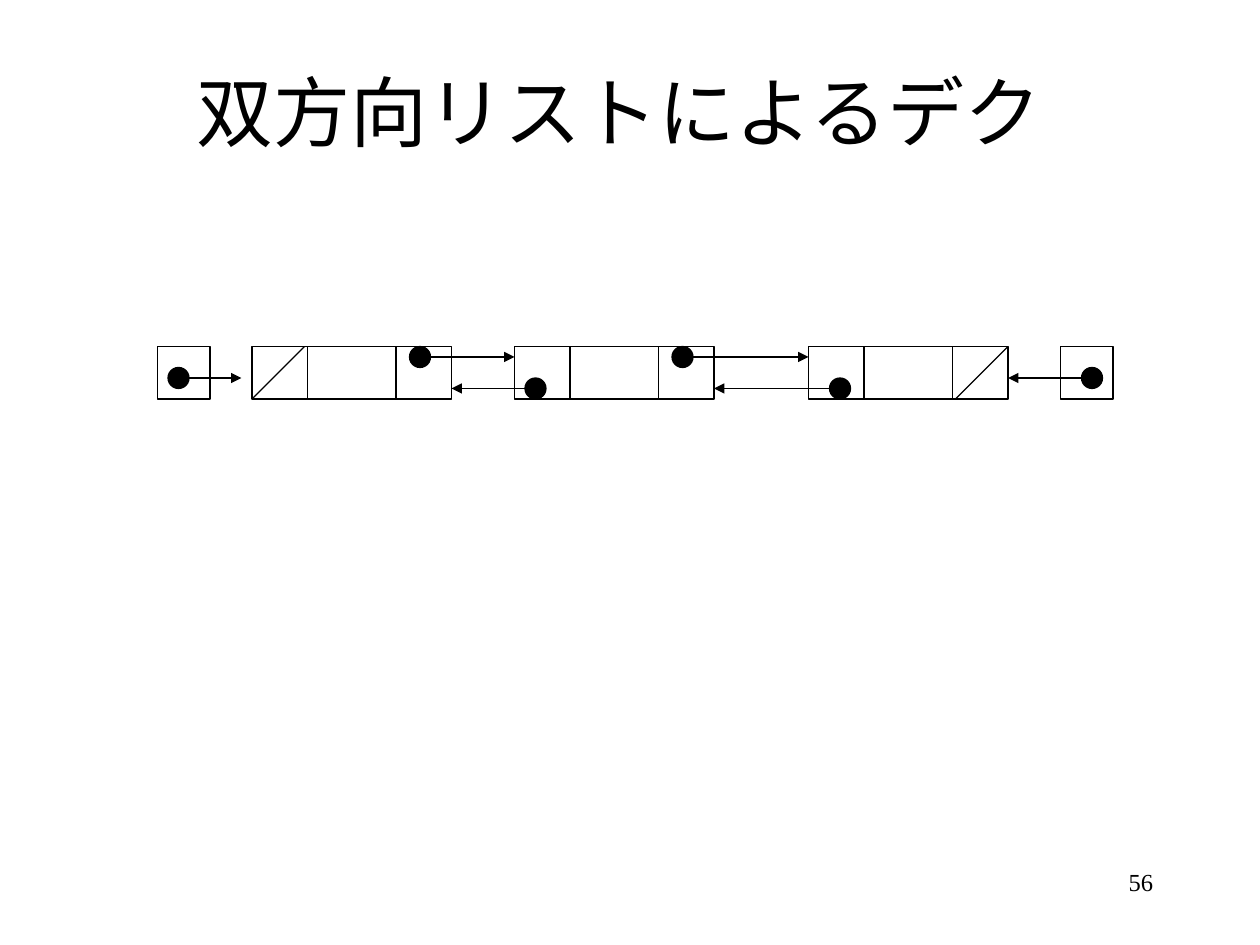
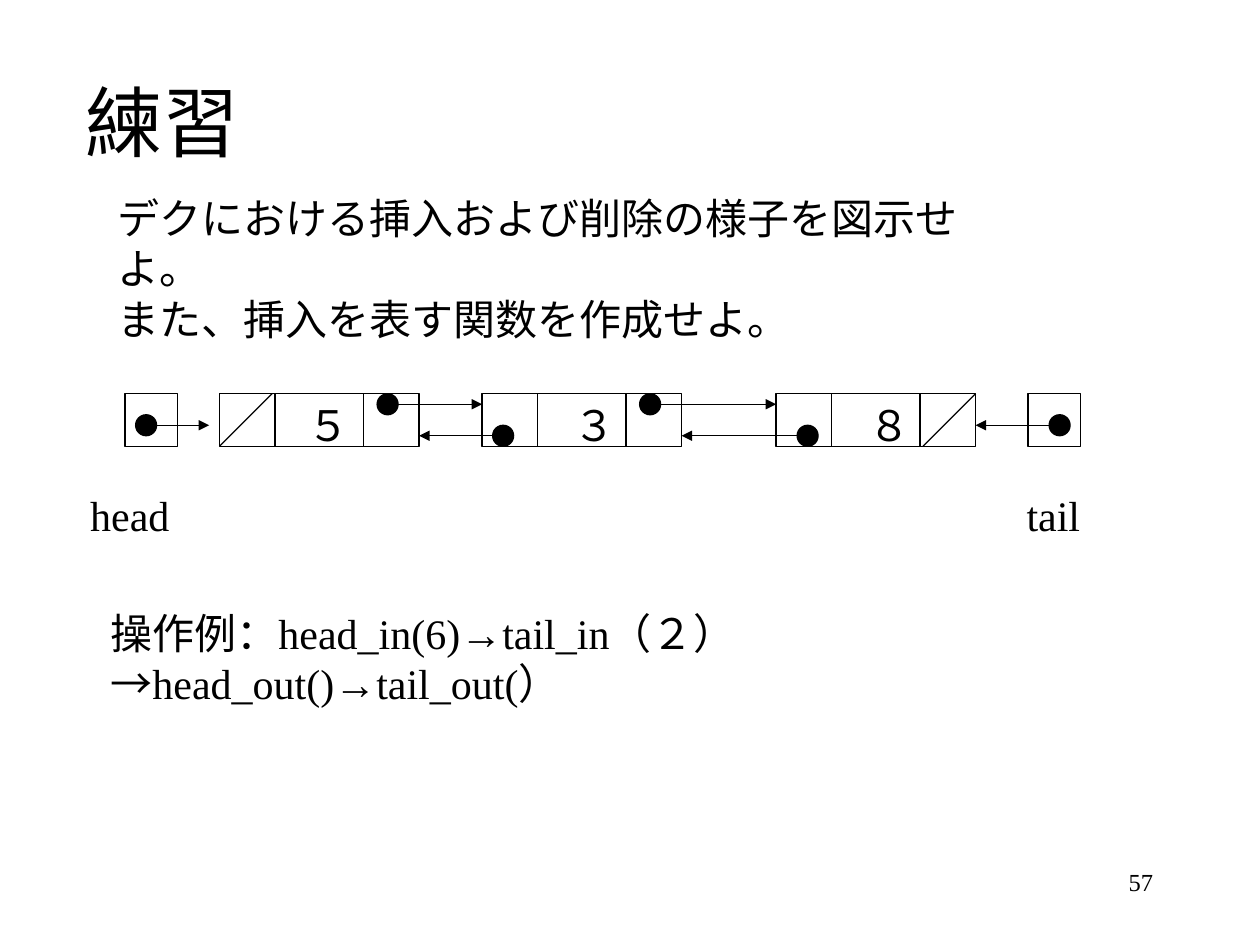
from pptx import Presentation
from pptx.dml.color import RGBColor
from pptx.enum.shapes import MSO_CONNECTOR as CONN, MSO_SHAPE as SHAPE
from pptx.enum.text import MSO_ANCHOR as ANCHOR, PP_ALIGN as ALIGN
from pptx.oxml.ns import qn
from pptx.util import Pt
from lxml.etree import SubElement

FONT = "Times New Roman"
BLACK = "000000"
TITLE_SIZE, BODY_SIZE, PAGE_SIZE = 44, 24, 14

# Boxes are (left, top, width, height) in points
PAGE_BOX = (516, 492, 150, 36)
SLIDES = [
    {
        "page": "56",
        "title": ("双方向リストによるデク", (48, 18, 612, 90), ALIGN.CENTER),
        "list_at": (90, 198),
        "values": [],
        "texts": [],
    },
    {
        "page": "57",
        "title": ("練習", (42, 24, 612, 90), ALIGN.LEFT),
        "list_at": (71.5, 225),
        "values": ["５", "３", "８"],
        "texts": [
            (["デクにおける挿入および削除の様子を図示せよ。",
              "また、挿入を表す関数を作成せよ。"], (60, 106.5, 510, 65), True),
            (["head"], (44.5, 276, 60.5, 36.5), False),
            (["tail"], (579.5, 276, 45.5, 36.5), False),
            (["操作例：head_in(6)→tail_in（２）→head_out()→tail_out(）"],
             (56, 343.5, 578, 36.5), True),
        ],
    },
]

# Linked list, measured from the top left of its head box
BOX = 30
DOT = 12
LINK_W, DATA_W = 31.75, 50.5
NODE_W = 2 * LINK_W + DATA_W
NODES = [54, 204, 372]
TAIL = 516
NEXT_DOT = 90            # from the node's left side
PREV_DOTS = [6, 12]      # the same, for the second and third node
VALUE_LEFTS = [43, 45, 46]
NEXT_Y, MID_Y, PREV_Y = 6, 18, 24


def rgb(color):
    return RGBColor.from_string(color)


def add_text(s, lines, box, size=BODY_SIZE, align=ALIGN.LEFT, anchor=ANCHOR.TOP, wrap=True):
    tf = s.shapes.add_textbox(*map(Pt, box)).text_frame
    tf.word_wrap = wrap
    tf.vertical_anchor = anchor
    for i, line in enumerate(lines):
        p = tf.add_paragraph() if i else tf.paragraphs[0]
        p.alignment = align
        r = p.add_run()
        r.text = line
        for key, value in {"name": FONT, "size": Pt(size)}.items():
            setattr(r.font, key, value)
        r.font.color.rgb = rgb(BLACK)


def add_outlined(s, kind, left, top, width, height, fill=None):
    sp = s.shapes.add_shape(kind, Pt(left), Pt(top), Pt(width), Pt(height))
    sp.shadow.inherit = False
    if fill:
        sp.fill.solid()
        sp.fill.fore_color.rgb = rgb(fill)
    else:
        sp.fill.background()
    sp.line.color.rgb = rgb(BLACK)
    sp.line.width = Pt(0.75)


def add_line(s, x1, y1, x2, y2, arrow=True):
    c = s.shapes.add_connector(CONN.STRAIGHT, Pt(x1), Pt(y1), Pt(x2), Pt(y2))
    c.line.color.rgb = rgb(BLACK)
    c.line.width = Pt(0.75)
    if arrow:
        SubElement(c.line._get_or_add_ln(), qn("a:tailEnd"), type="triangle")
    SubElement(c._element.spPr, qn("a:effectLst"))


def add_linked_list(s, x0, y0, values):
    cells = [(0, BOX), (TAIL, BOX)]
    for node in NODES:
        cells += [(node, LINK_W), (node + LINK_W, DATA_W),
                  (node + LINK_W + DATA_W, LINK_W)]
    for x, width in cells:
        add_outlined(s, SHAPE.RECTANGLE, x0 + x, y0, width, BOX)

    # Pointers: left of the dot, height of its centre, start and end of the arrow
    pointers = [(6, MID_Y, 12, 48),
                (TAIL + 12, MID_Y, TAIL + 18, NODES[-1] + NODE_W)]
    for left, right, inset in zip(NODES, NODES[1:], PREV_DOTS):
        next_dot, prev_dot = left + NEXT_DOT, right + inset
        pointers += [(next_dot, NEXT_Y, next_dot + DOT, right),
                     (prev_dot, PREV_Y, prev_dot + DOT / 2, left + NODE_W)]
    for dot, y, start, end in pointers:
        add_outlined(s, SHAPE.OVAL, x0 + dot, y0 + y - DOT / 2, DOT, DOT, BLACK)
        add_line(s, x0 + start, y0 + y, x0 + end, y0 + y)

    # Slashes mark the empty links at both ends
    for x in (NODES[0], NODES[-1] + NODE_W - BOX):
        add_line(s, x0 + x + BOX, y0, x0 + x, y0 + BOX, arrow=False)
    for value, node, left in zip(values, NODES, VALUE_LEFTS):
        add_text(s, [value], (x0 + node + left, y0, 31, 36.5), wrap=False)


def main():
    prs = Presentation()
    prs.slide_width, prs.slide_height = Pt(720), Pt(540)
    for content in SLIDES:
        s = prs.slides.add_slide(prs.slide_layouts[6])
        add_text(s, [content["page"]], PAGE_BOX, PAGE_SIZE, ALIGN.RIGHT)
        title, box, align = content["title"]
        add_text(s, [title], box, TITLE_SIZE, align, ANCHOR.MIDDLE)
        add_linked_list(s, *content["list_at"], content["values"])
        for lines, box, wrap in content["texts"]:
            add_text(s, lines, box, wrap=wrap)
    prs.save("out.pptx")


if __name__ == "__main__":
    main()
